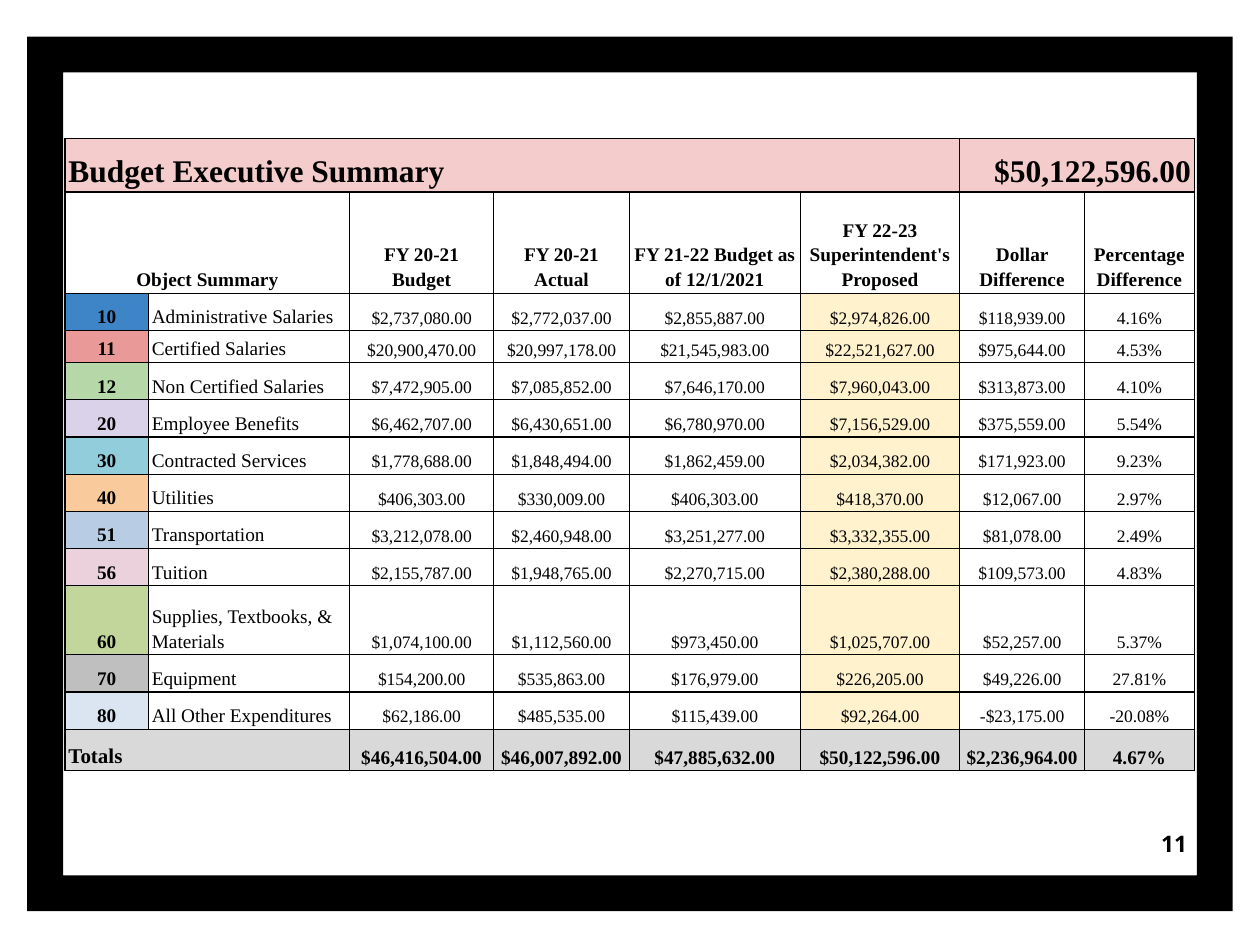
from dataclasses import dataclass

from lxml import etree
from pptx import Presentation
from pptx.dml.color import RGBColor
from pptx.enum.shapes import MSO_SHAPE
from pptx.enum.text import MSO_ANCHOR, PP_ALIGN
from pptx.oxml.ns import qn
from pptx.util import Cm, Pt

FRAME = MSO_SHAPE.FRAME
LEFT, CENTER, RIGHT = PP_ALIGN.LEFT, PP_ALIGN.CENTER, PP_ALIGN.RIGHT
MIDDLE, BOTTOM = MSO_ANCHOR.MIDDLE, MSO_ANCHOR.BOTTOM
BLANK_LAYOUT = 6


@dataclass(frozen=True)
class Theme:
    font: str = "Times New Roman"
    number_font: str = "Noto Sans"
    ink: str = "000000"
    banner: str = "F4CCCC"
    proposed: str = "FFF2CC"
    totals: str = "D9D9D9"
    banner_size: int = 18
    page_number_size: int = 13
    totals_size: int = 12
    label_size: int = 11
    amount_size: int = 10
    line_spacing: float = 1.15
    border: float = 0.75


THEME = Theme()
PROPOSED_COLUMN = 5
COLUMN_WIDTHS = [1.68, 4.06, 2.9, 2.74, 3.44, 3.22, 2.51, 2.22]
ROW_HEIGHTS = [1.07, 2.04, 0.75, 0.65] + [0.75] * 6 + [1.39, 0.75, 0.75, 0.84]
HEADINGS = [
    "Object Summary", "", "FY 20-21 Budget", "FY 20-21 Actual",
    "FY 21-22 Budget as of 12/1/2021", "FY 22-23 Superintendent's Proposed",
    "Dollar Difference", "Percentage Difference",
]
OBJECTS = [
    ("3D85C6", "10", "Administrative Salaries", 2737080, 2772037, 2855887, 2974826, 118939, 4.16),
    ("EA9999", "11", "Certified Salaries", 20900470, 20997178, 21545983, 22521627, 975644, 4.53),
    ("B6D7A8", "12", "Non Certified Salaries", 7472905, 7085852, 7646170, 7960043, 313873, 4.10),
    ("D9D2E9", "20", "Employee Benefits", 6462707, 6430651, 6780970, 7156529, 375559, 5.54),
    ("92CDDC", "30", "Contracted Services", 1778688, 1848494, 1862459, 2034382, 171923, 9.23),
    ("F9CB9C", "40", "Utilities", 406303, 330009, 406303, 418370, 12067, 2.97),
    ("B8CCE4", "51", "Transportation", 3212078, 2460948, 3251277, 3332355, 81078, 2.49),
    ("EAD1DC", "56", "Tuition", 2155787, 1948765, 2270715, 2380288, 109573, 4.83),
    ("C2D69B", "60", "Supplies, Textbooks, & Materials", 1074100, 1112560, 973450, 1025707, 52257, 5.37),
    ("BFBFBF", "70", "Equipment", 154200, 535863, 176979, 226205, 49226, 27.81),
    ("DBE5F1", "80", "All Other Expenditures", 62186, 485535, 115439, 92264, -23175, -20.08),
]
TOTALS = (46416504, 46007892, 47885632, 50122596, 2236964, 4.67)


def dollars(amount):
    sign = "-" if amount < 0 else ""
    return f"{sign}${abs(amount):,.2f}"


def figures(values):
    return [dollars(amount) for amount in values[:-1]] + [f"{values[-1]:.2f}%"]


def write_text(frame, text, size, bold=False, align=CENTER, font=THEME.font, spacing=None):
    para = frame.paragraphs[0]
    para.alignment = align
    para.line_spacing = spacing
    span = para.add_run()
    span.text = text
    span.font.name = font
    span.font.size = Pt(size)
    span.font.bold = bold
    span.font.color.rgb = RGBColor.from_string(THEME.ink)


class BudgetPage:
    def __init__(self, deck, theme):
        self.theme = theme
        self.page = deck.slides.add_slide(deck.slide_layouts[BLANK_LAYOUT])

    def frame(self, left, top, width, height, thickness):
        shape = self.page.shapes.add_shape(FRAME, Cm(left), Cm(top), Cm(width), Cm(height))
        shape.adjustments[0] = thickness
        shape.shadow.inherit = False
        shape.fill.solid()
        shape.fill.fore_color.rgb = RGBColor.from_string(self.theme.ink)
        shape.line.fill.background()

    def page_number(self, text, left, top, width, height):
        box = self.page.shapes.add_textbox(Cm(left), Cm(top), Cm(width), Cm(height))
        frame = box.text_frame
        frame.word_wrap = True
        frame.vertical_anchor = MIDDLE
        frame.margin_left = frame.margin_right = Cm(0.25)
        frame.margin_top = frame.margin_bottom = Cm(0.25)
        write_text(frame, text, self.theme.page_number_size, bold=True, align=RIGHT,
                   font=self.theme.number_font)

    def table(self, left, top, widths, heights):
        table = self.page.shapes.add_table(
            len(heights), len(widths), Cm(left), Cm(top), Cm(sum(widths)), Cm(sum(heights))
        ).table
        table.first_row = table.horz_banding = False
        for column, width in zip(table.columns, widths):
            column.width = Cm(width)
        for row, height in zip(table.rows, heights):
            row.height = Cm(height)
        return table

    def border(self, cell):
        properties = cell._tc.get_or_add_tcPr()
        for side in ("a:lnL", "a:lnR", "a:lnT", "a:lnB"):
            line = etree.SubElement(properties, qn(side), w=str(Pt(self.theme.border)))
            fill = etree.SubElement(line, qn("a:solidFill"))
            etree.SubElement(fill, qn("a:srgbClr"), val=self.theme.ink)

    def cell(self, cell, text, size, fill=None, **style):
        cell.vertical_anchor = BOTTOM
        cell.margin_left = cell.margin_right = Cm(0.07)
        cell.margin_top = cell.margin_bottom = Cm(0.05)
        self.border(cell)
        if fill:
            cell.fill.solid()
            cell.fill.fore_color.rgb = RGBColor.from_string(fill)
        else:
            cell.fill.background()
        write_text(cell.text_frame, text, size, spacing=self.theme.line_spacing, **style)

    def budget_table(self, left, top):
        theme = self.theme
        table = self.table(left, top, COLUMN_WIDTHS, ROW_HEIGHTS)
        last = len(ROW_HEIGHTS) - 1
        for row, first, end in ((0, 0, 5), (0, 6, 7), (1, 0, 1), (last, 0, 1)):
            table.cell(row, first).merge(table.cell(row, end))

        banner = {"size": theme.banner_size, "fill": theme.banner, "bold": True}
        self.cell(table.cell(0, 0), "Budget Executive Summary", align=LEFT, **banner)
        self.cell(table.cell(0, 6), dollars(TOTALS[3]), align=RIGHT, **banner)

        for column, heading in enumerate(HEADINGS):
            if heading:
                self.cell(table.cell(1, column), heading, theme.label_size, bold=True)

        for row, (color, code, name, *values) in enumerate(OBJECTS, 2):
            self.cell(table.cell(row, 0), code, theme.label_size, fill=color, bold=True)
            self.cell(table.cell(row, 1), name, theme.label_size, align=LEFT)
            for column, text in enumerate(figures(values), 2):
                fill = theme.proposed if column == PROPOSED_COLUMN else None
                self.cell(table.cell(row, column), text, theme.amount_size, fill=fill)

        total = {"fill": theme.totals, "bold": True}
        self.cell(table.cell(last, 0), "Totals", theme.totals_size, align=LEFT, **total)
        for column, text in enumerate(figures(TOTALS), 2):
            self.cell(table.cell(last, column), text, theme.label_size, **total)


def main():
    deck = Presentation()
    deck.slide_width, deck.slide_height = Cm(25.4), Cm(19.05)
    budget = BudgetPage(deck, THEME)
    budget.frame(0.55, 0.74, 24.3, 17.63, 0.041)
    budget.page_number("11", 22.66, 16.28, 1.52, 1.45)
    budget.budget_table(1.31, 2.8)
    deck.save("out.pptx")


if __name__ == "__main__":
    main()
